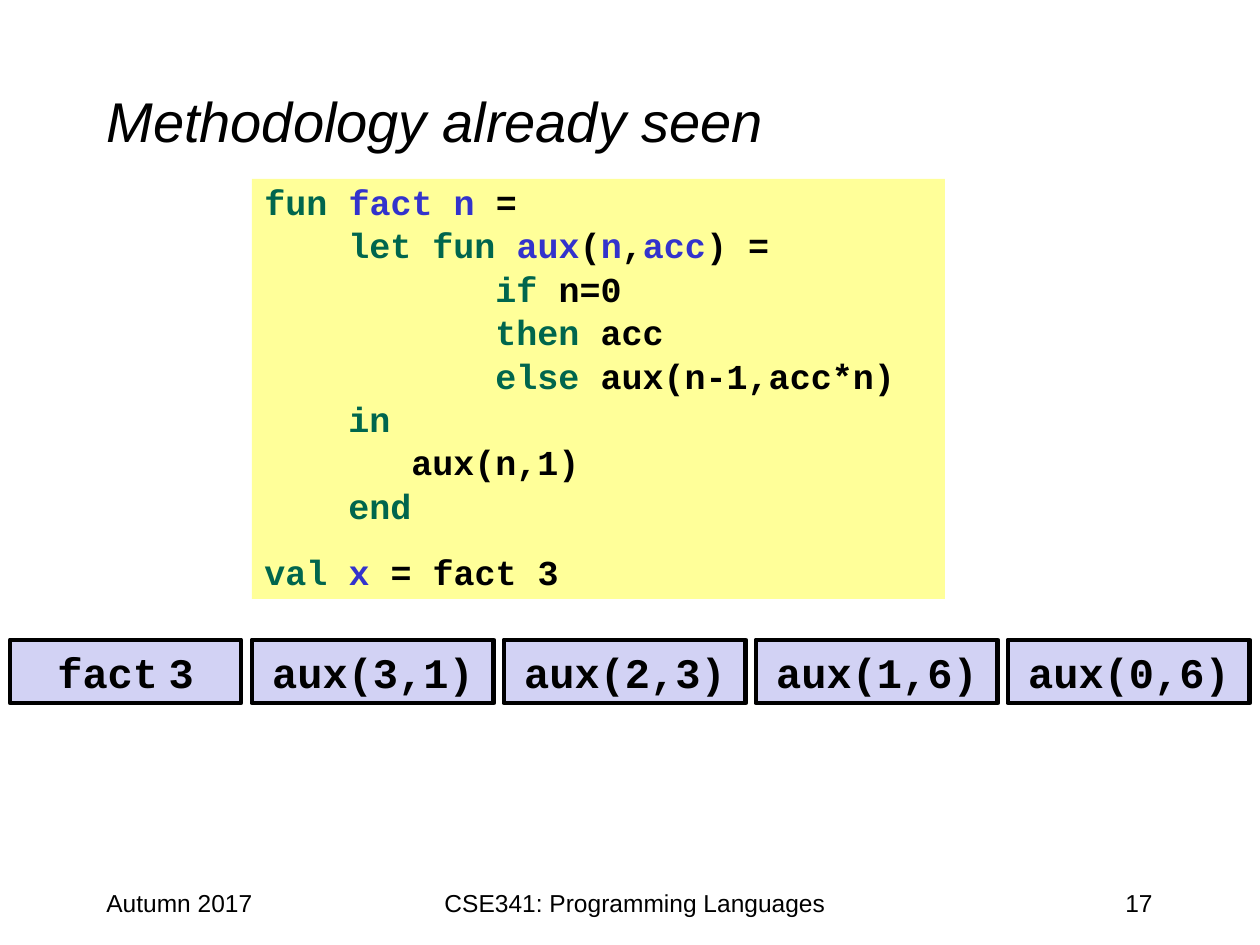
from pptx import Presentation
from pptx import util as u
from pptx.dml.color import RGBColor
from pptx.enum import shapes, text

SCALE = u.Inches(1) / 126
CHARACTER = 21
KEYWORD, NAME, PLAIN = "00664D", "3333CC", "000000"

CODE = [
    (0, [("fun ", KEYWORD), ("fact n", NAME), (" =", PLAIN)]),
    (4, [("let fun ", KEYWORD), ("aux", NAME), ("(", PLAIN), ("n", NAME),
         (",", PLAIN), ("acc", NAME), (") =", PLAIN)]),
    (11, [("if ", KEYWORD), ("n=0", PLAIN)]),
    (11, [("then ", KEYWORD), ("acc", PLAIN)]),
    (11, [("else ", KEYWORD), ("aux(n-1,acc*n)", PLAIN)]),
    (4, [("in", KEYWORD)]),
    (7, [("aux(n,1)", PLAIN)]),
    (4, [("end", KEYWORD)]),
    (0, [("val ", KEYWORD), ("x", NAME), (" = fact 3", PLAIN)]),
]
CALLS = ["aux(3,1)", "aux(2,3)", "aux(1,6)", "aux(0,6)"]


def px(length):
    return u.Emu(round(length * SCALE))


def color(value):
    return RGBColor.from_string(value)


def add_text(paragraph, content, size=14, font="Arial", fill=PLAIN, bold=False, italic=False):
    run = paragraph.add_run()
    run.text = content
    run.font.size = u.Pt(size)
    run.font.name = font
    run.font.color.rgb = color(fill)
    run.font.bold = bold
    run.font.italic = italic


class SlideBuilder:
    mono = "Courier New"
    code_fill = "FFFF99"
    frame_fill = "D2D2F4"

    def __init__(self, slide):
        self.slide = slide

    def label(self, box, content, align=text.PP_ALIGN.LEFT, anchor=text.MSO_ANCHOR.TOP, **style):
        frame = self.slide.shapes.add_textbox(*map(px, box)).text_frame
        frame.word_wrap = True
        frame.vertical_anchor = anchor
        paragraph = frame.paragraphs[0]
        paragraph.alignment = align
        add_text(paragraph, content, **style)

    def rectangle(self, box, fill):
        shape = self.slide.shapes.add_shape(shapes.MSO_SHAPE.RECTANGLE, *map(px, box))
        shape.shadow.inherit = False
        shape.fill.solid()
        shape.fill.fore_color.rgb = color(fill)
        shape.line.fill.background()
        shape.text_frame.word_wrap = True
        shape.text_frame.vertical_anchor = text.MSO_ANCHOR.TOP
        return shape

    def code(self, box, lines):
        frame = self.rectangle(box, self.code_fill).text_frame
        for index, (indent, parts) in enumerate(lines):
            paragraph = frame.add_paragraph() if index else frame.paragraphs[0]
            paragraph.alignment = text.PP_ALIGN.LEFT
            paragraph.line_spacing = 0.9
            starts_block = index and lines[index - 1][1][0][0] == "end"
            paragraph.space_before = u.Pt(16.2 if starts_block else 3.2)
            paragraph._p.get_or_add_pPr().set("marL", str(px(indent * CHARACTER)))
            for content, fill in parts:
                add_text(paragraph, content, size=20, font=self.mono, fill=fill, bold=True)

    def stack_frame(self, box, parts):
        shape = self.rectangle(box, self.frame_fill)
        shape.line.color.rgb = color(PLAIN)
        shape.line.width = u.Pt(2.75)
        frame = shape.text_frame
        frame.margin_left = frame.margin_right = 0
        paragraph = frame.paragraphs[0]
        paragraph.alignment = text.PP_ALIGN.CENTER
        paragraph.space_before = u.Pt(4.8)
        for content, size in parts:
            add_text(paragraph, content, size=size, font=self.mono, bold=True)


def main():
    presentation = Presentation()
    presentation.slide_width = px(1260)
    presentation.slide_height = px(945)
    builder = SlideBuilder(presentation.slides.add_slide(presentation.slide_layouts[6]))

    builder.label((94, 42, 1071, 157), "Methodology already seen",
                  anchor=text.MSO_ANCHOR.MIDDLE, size=32, italic=True)
    builder.label((94, 882, 262, 63), "Autumn 2017")
    builder.label((903, 882, 262, 63), "17", align=text.PP_ALIGN.RIGHT)
    builder.label((399, 882, 472, 63), "CSE341: Programming Languages",
                  align=text.PP_ALIGN.CENTER)

    builder.code((252, 179, 693, 420), CODE)

    builder.stack_frame((10, 640, 231, 63), [("fact", 24), (" ", 10), ("3", 24)])
    for column, call in enumerate(CALLS, start=1):
        builder.stack_frame((252 * column, 640, 242, 63), [(call, 24)])

    presentation.save("out.pptx")


if __name__ == "__main__":
    main()
